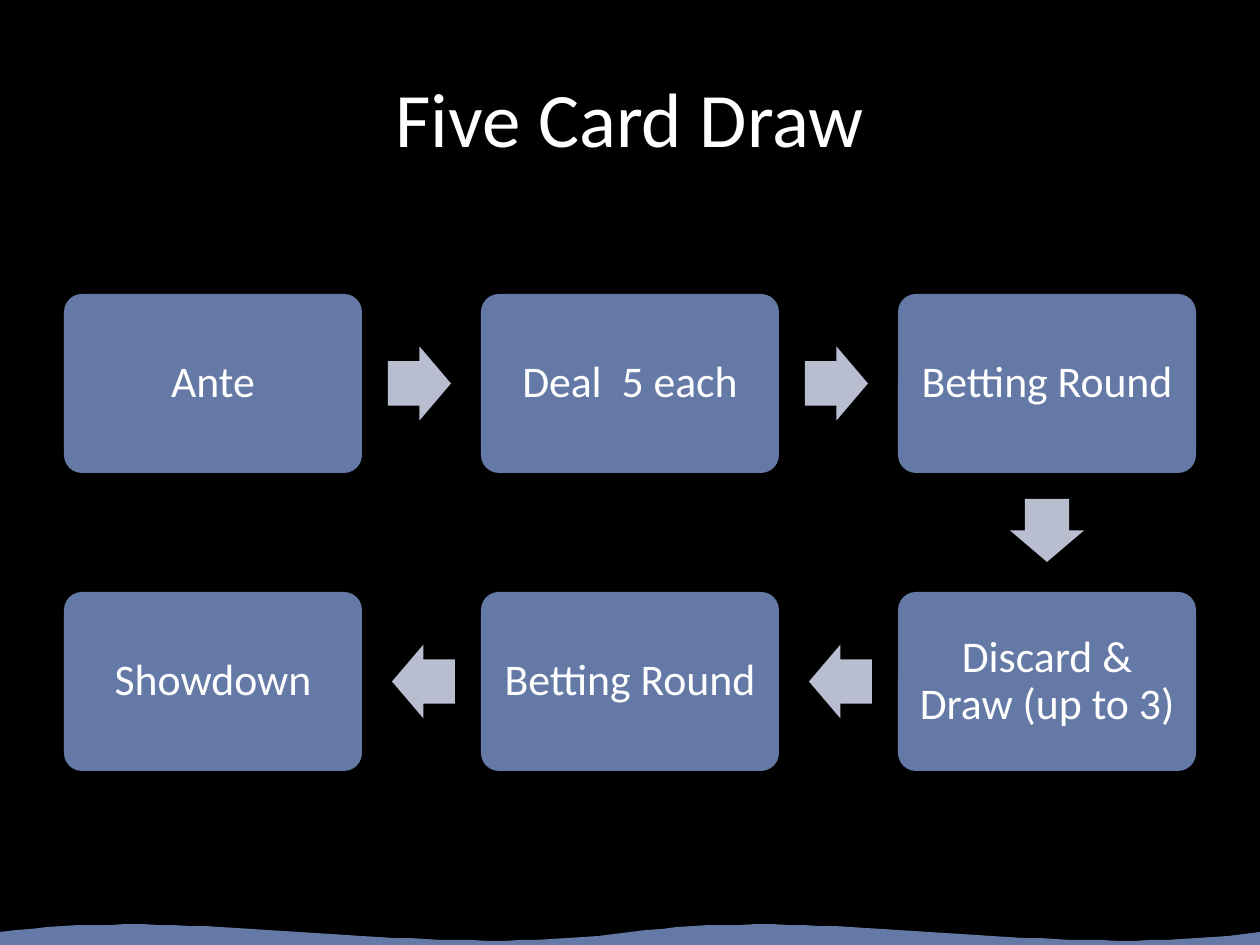
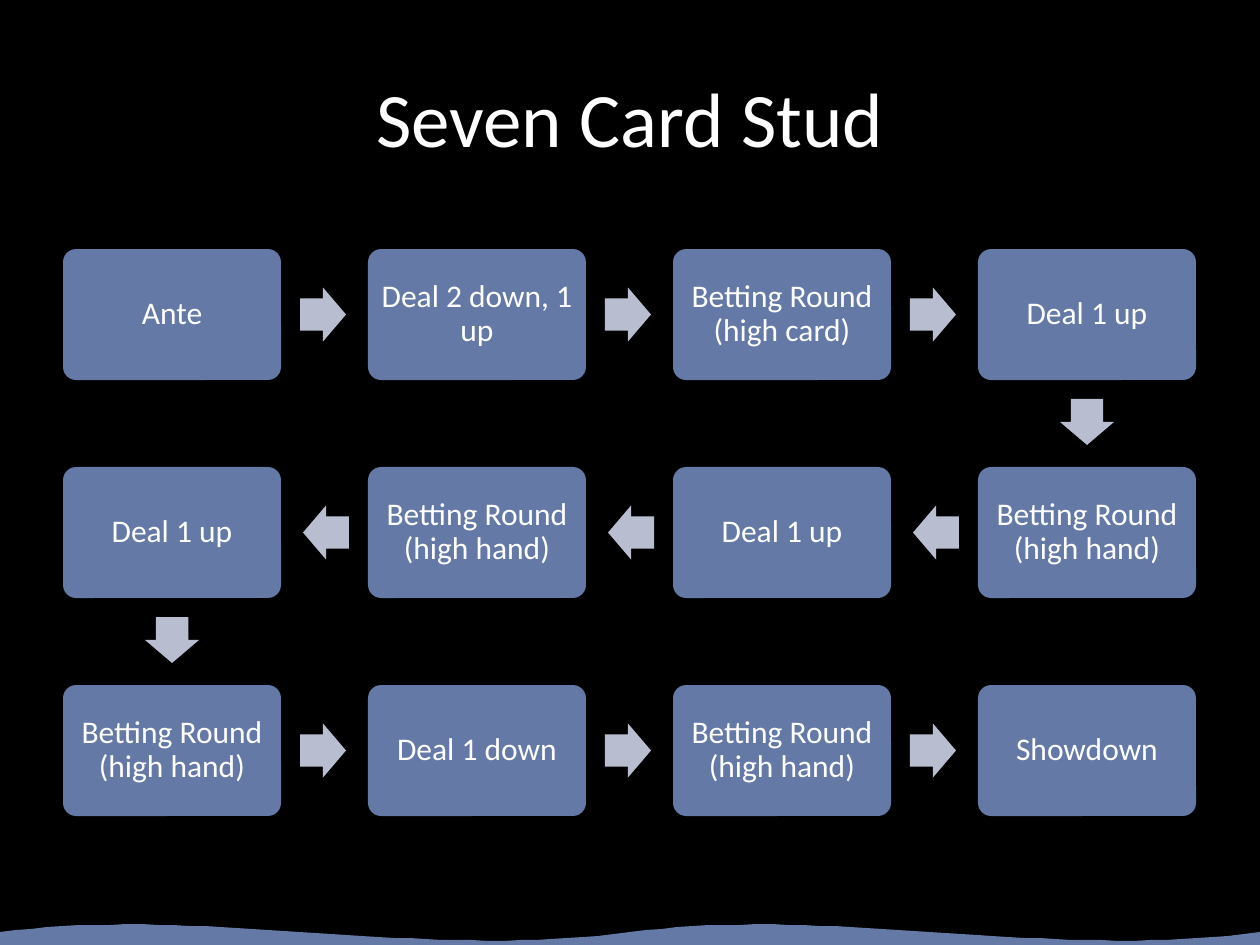
from dataclasses import dataclass
from itertools import pairwise

from pptx import Presentation
from pptx.dml.color import RGBColor
from pptx.enum.shapes import MSO_SHAPE as Shape
from pptx.enum.text import MSO_ANCHOR as Anchor, PP_ALIGN as Align
from pptx.util import Pt

EMU_PER_PX = 914400 / 126
WIDTH, HEIGHT = 1260, 945


def px(length):
    return round(length * EMU_PER_PX)


@dataclass(frozen=True)
class Theme:
    font: str = "Calibri"
    background: str = "000000"
    text: str = "FFFFFF"
    accent: str = "6479A6"
    arrow: str = "B8BED0"
    title_size: int = 44


@dataclass(frozen=True)
class Grid:
    """Sizes in px of a flow that winds left to right, then right to left."""
    columns: int
    left: int
    top: int
    column_step: int
    row_step: int
    box_width: int
    box_height: int
    arrow_length: int
    arrow_width: int
    gap: int
    margin: int
    text_size: int

    def box_centre(self, index):
        row, column = divmod(index, self.columns)
        if row % 2:
            column = self.columns - 1 - column
        return (self.left + column * self.column_step + self.box_width / 2,
                self.top + row * self.row_step + self.box_height / 2)


def write_text(shape, text, *, size, color, font, margin=13, line_spacing=1.0):
    frame = shape.text_frame
    frame.word_wrap = True
    frame.vertical_anchor = Anchor.MIDDLE
    frame.margin_left = frame.margin_right = px(margin)
    frame.margin_top = frame.margin_bottom = px(margin)
    paragraph = frame.paragraphs[0]
    paragraph.text = text
    paragraph.alignment = Align.CENTER
    paragraph.line_spacing = line_spacing
    paragraph.font.name = font
    paragraph.font.size = Pt(size)
    paragraph.font.color.rgb = RGBColor.from_string(color)


def bezier(points, steps=40):
    """Points along a cubic curve, without its first one."""
    start, first, second, end = points
    for step in range(1, steps + 1):
        t = step / steps
        u = 1 - t
        yield tuple(u**3 * a + 3 * u * u * t * b + 3 * u * t * t * c + t**3 * d
                    for a, b, c, d in zip(start, first, second, end))


class Deck:
    def __init__(self, theme):
        self.theme = theme
        self.presentation = Presentation()
        self.presentation.slide_width = px(WIDTH)
        self.presentation.slide_height = px(HEIGHT)
        self.slide = None

    def add_slide(self, title):
        self.slide = self.presentation.slides.add_slide(self.presentation.slide_layouts[6])
        fill = self.slide.background.fill
        fill.solid()
        fill.fore_color.rgb = RGBColor.from_string(self.theme.background)
        self.wave()
        self.title(title)

    def paint(self, shape, color):
        shape.fill.solid()
        shape.fill.fore_color.rgb = RGBColor.from_string(color)
        shape.line.fill.background()
        shape.shadow.inherit = False

    def wave(self):
        middle, crest, trough, bottom = 932, 905, 961, 953
        half = WIDTH // 2
        outline = []
        for x in (0, half):
            outline += bezier([(x, middle), (x + half / 3, crest),
                               (x + half * 2 / 3, trough), (x + half, middle)])
        outline += [(WIDTH, bottom), (0, bottom)]
        builder = self.slide.shapes.build_freeform(0, middle, scale=EMU_PER_PX)
        builder.add_line_segments(outline, close=True)
        self.paint(builder.convert_to_shape(), self.theme.accent)

    def title(self, text):
        box = self.slide.shapes.add_textbox(px(63), px(38), px(1134), px(158))
        write_text(box, text, size=self.theme.title_size,
                   color=self.theme.text, font=self.theme.font)

    def centred_shape(self, kind, centre, width, height, color):
        x, y = centre
        shape = self.slide.shapes.add_shape(
            kind, px(x - width / 2), px(y - height / 2), px(width), px(height))
        self.paint(shape, color)
        return shape

    def step_box(self, grid, centre, text):
        box = self.centred_shape(Shape.ROUNDED_RECTANGLE, centre,
                                 grid.box_width, grid.box_height, self.theme.accent)
        box.adjustments[0] = 0.1
        write_text(box, text, size=grid.text_size, color=self.theme.text,
                   font=self.theme.font, margin=grid.margin, line_spacing=0.9)

    def arrow(self, grid, start, end):
        """Arrow that leaves the start box towards the end box."""
        (x, y), (end_x, end_y) = start, end
        reach = grid.gap + grid.arrow_length / 2
        if end_y > y:
            rotation, centre = 90, (x, y + grid.box_height / 2 + reach)
        elif end_x > x:
            rotation, centre = 0, (x + grid.box_width / 2 + reach, y)
        else:
            rotation, centre = 180, (x - grid.box_width / 2 - reach, y)
        arrow = self.centred_shape(Shape.RIGHT_ARROW, centre,
                                   grid.arrow_length, grid.arrow_width, self.theme.arrow)
        arrow.adjustments[0] = 0.6
        arrow.adjustments[1] = 0.5
        arrow.rotation = rotation

    def flow(self, grid, steps):
        centres = [grid.box_centre(index) for index in range(len(steps))]
        for centre, text in zip(centres, steps):
            self.step_box(grid, centre, text)
        for start, end in pairwise(centres):
            self.arrow(grid, start, end)


FIVE_CARD_GRID = Grid(columns=3, left=64, top=294, column_step=417, row_step=298,
                      box_width=298, box_height=179, arrow_length=63, arrow_width=74,
                      gap=26, margin=13, text_size=25)
SEVEN_CARD_GRID = Grid(columns=4, left=63, top=249, column_step=305, row_step=218,
                       box_width=218, box_height=131, arrow_length=46, arrow_width=54,
                       gap=19, margin=9, text_size=18)

FIVE_CARD_STEPS = ["Ante", "Deal  5 each", "Betting Round",
                   "Discard & Draw (up to 3)", "Betting Round", "Showdown"]
HIGH_HAND = "Betting Round (high hand)"
SEVEN_CARD_STEPS = ["Ante", "Deal 2 down, 1 up", "Betting Round (high card)", "Deal 1 up",
                    HIGH_HAND, "Deal 1 up", HIGH_HAND, "Deal 1 up",
                    HIGH_HAND, "Deal 1 down", HIGH_HAND, "Showdown"]


def main():
    deck = Deck(Theme())
    deck.add_slide("Five Card Draw")
    deck.flow(FIVE_CARD_GRID, FIVE_CARD_STEPS)
    deck.add_slide("Seven Card Stud")
    deck.flow(SEVEN_CARD_GRID, SEVEN_CARD_STEPS)
    deck.presentation.save("out.pptx")


if __name__ == "__main__":
    main()
